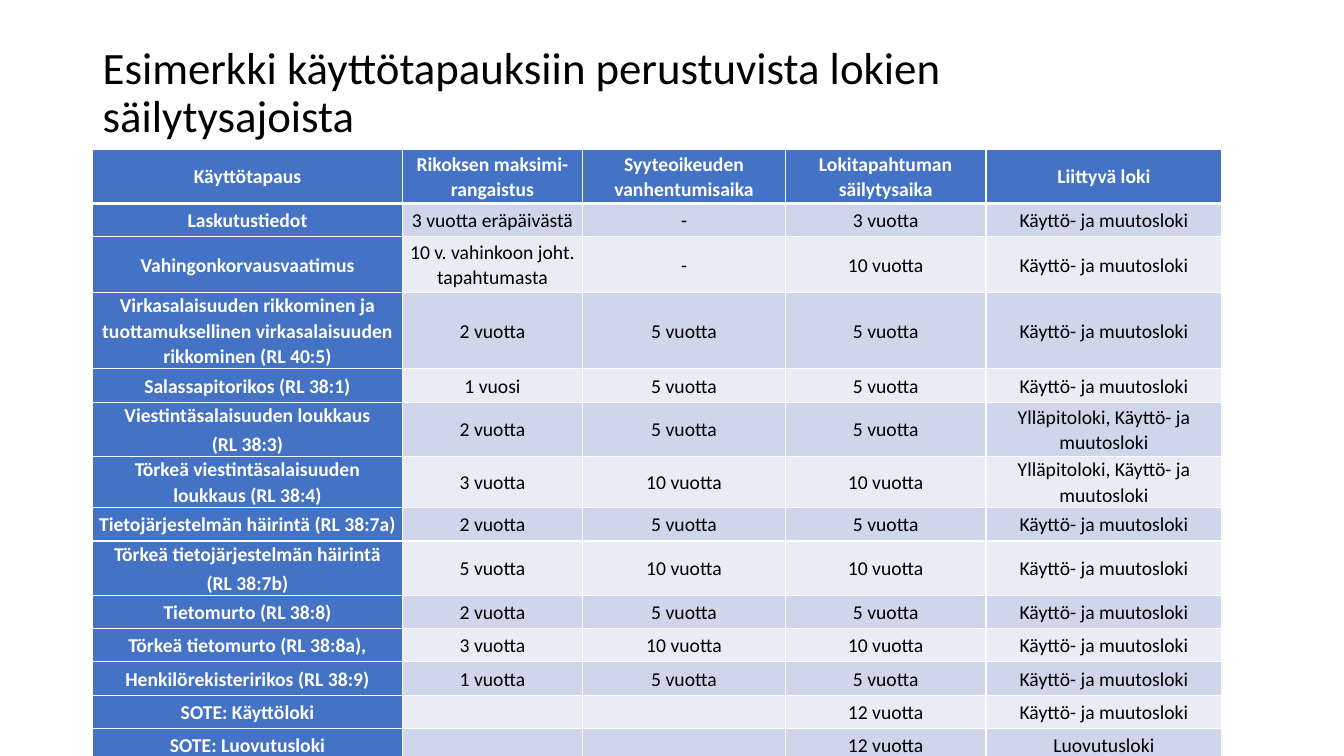
from dataclasses import dataclass
from lxml import etree
from pptx import Presentation
from pptx.dml.color import RGBColor
from pptx.enum.text import MSO_ANCHOR, PP_ALIGN
from pptx.oxml.ns import qn
from pptx.util import Inches, Pt

MIDDLE = MSO_ANCHOR.MIDDLE
TOP = MSO_ANCHOR.TOP
CENTER = PP_ALIGN.CENTER


@dataclass
class Theme:
    font: str = "Calibri"
    title: int = 32
    body: int = 14
    white: str = "FFFFFF"
    black: str = "000000"
    blue: str = "4472C4"
    dark: str = "CFD5EA"
    light: str = "E9EBF5"


theme = Theme()


def style(para, size, color, bold=False):
    for run in para.runs:
        run.font.name = theme.font
        run.font.size = Pt(size)
        run.font.bold = bold
        run.font.color.rgb = RGBColor.from_string(color)


def border(cell, side, width):
    line = etree.SubElement(cell._tc.get_or_add_tcPr(), qn("a:" + side), w=str(Pt(width)))
    fill = etree.SubElement(line, qn("a:solidFill"))
    etree.SubElement(fill, qn("a:srgbClr"), val=theme.white)


deck = Presentation()
deck.slide_width = Inches(13.33)
deck.slide_height = Inches(7.5)
slide = deck.slides.add_slide(deck.slide_layouts[6])

# Table content
usage = "Käyttö- ja muutosloki"
admin = "Ylläpitoloki, Käyttö- ja muutosloki"
rows = [
    ("Käyttötapaus", "Rikoksen maksimi-rangaistus", "Syyteoikeuden vanhentumisaika",
     "Lokitapahtuman säilytysaika", "Liittyvä loki"),
    ("Laskutustiedot", "3 vuotta eräpäivästä", "-", "3 vuotta", usage),
    ("Vahingonkorvausvaatimus", "10 v. vahinkoon joht. tapahtumasta", "-", "10 vuotta", usage),
    ("Virkasalaisuuden rikkominen ja tuottamuksellinen virkasalaisuuden rikkominen (RL 40:5)",
     "2 vuotta", "5 vuotta", "5 vuotta", usage),
    ("Salassapitorikos (RL 38:1)", "1 vuosi", "5 vuotta", "5 vuotta", usage),
    ("Viestintäsalaisuuden loukkaus\n(RL 38:3)", "2 vuotta", "5 vuotta", "5 vuotta", admin),
    ("Törkeä viestintäsalaisuuden loukkaus (RL 38:4)",
     "3 vuotta", "10 vuotta", "10 vuotta", admin),
    ("Tietojärjestelmän häirintä (RL 38:7a)", "2 vuotta", "5 vuotta", "5 vuotta", usage),
    ("Törkeä tietojärjestelmän häirintä\n(RL 38:7b)",
     "5 vuotta", "10 vuotta", "10 vuotta", usage),
    ("Tietomurto (RL 38:8)", "2 vuotta", "5 vuotta", "5 vuotta", usage),
    ("Törkeä tietomurto (RL 38:8a),", "3 vuotta", "10 vuotta", "10 vuotta", usage),
    ("Henkilörekisteririkos (RL 38:9)", "1 vuotta", "5 vuotta", "5 vuotta", usage),
    ("SOTE: Käyttöloki", "", "", "12 vuotta", usage),
    ("SOTE: Luovutusloki", "", "", "12 vuotta", "Luovutusloki"),
]
widths = [3.07, 1.79, 2.01, 1.99, 2.34]
tall = {0: 0.54, 2: 0.55, 3: 0.71, 5: 0.52, 6: 0.48, 8: 0.52}
heights = [tall.get(r, 0.33) for r in range(len(rows))]
tight = 9  # from this row on, the last column has no space after

# Table grid
table = slide.shapes.add_table(
    len(rows), len(widths), Inches(0.92), Inches(1.48),
    Inches(sum(widths)), Inches(sum(heights))).table
table.horz_banding = False
for col, width in zip(table.columns, widths):
    col.width = Inches(width)
for row, height in zip(table.rows, heights):
    row.height = Inches(height)

# Table cells
for r, texts in enumerate(rows):
    for c, text in enumerate(texts):
        cell = table.cell(r, c)
        head = r == 0 or c == 0
        cell.vertical_anchor = MIDDLE
        cell.margin_left = cell.margin_right = Inches(0.06)
        cell.margin_top = cell.margin_bottom = 0
        for side in ("lnL", "lnR", "lnT", "lnB"):
            thick = (r, side) in ((0, "lnB"), (1, "lnT"))
            border(cell, side, 3 if thick else 1)
        cell.fill.solid()
        band = theme.dark if r % 2 else theme.light
        cell.fill.fore_color.rgb = RGBColor.from_string(theme.blue if head else band)
        if not text:
            continue
        cell.text_frame.text = text
        for para in cell.text_frame.paragraphs:
            para.alignment = CENTER
            para.line_spacing = 1.07
            para.space_after = Pt(0 if c == 4 and r >= tight else 2.4)
            style(para, theme.body, theme.white if head else theme.black, head)

# Title
title = slide.shapes.add_textbox(Inches(0.92), Inches(0.4), Inches(11.93), Inches(1.45))
frame = title.text_frame
frame.word_wrap = True
frame.vertical_anchor = TOP
frame.text = "Esimerkki käyttötapauksiin perustuvista lokien\nsäilytysajoista"
for para in frame.paragraphs:
    para.line_spacing = 0.9
    style(para, theme.title, theme.black)

deck.save("out.pptx")
